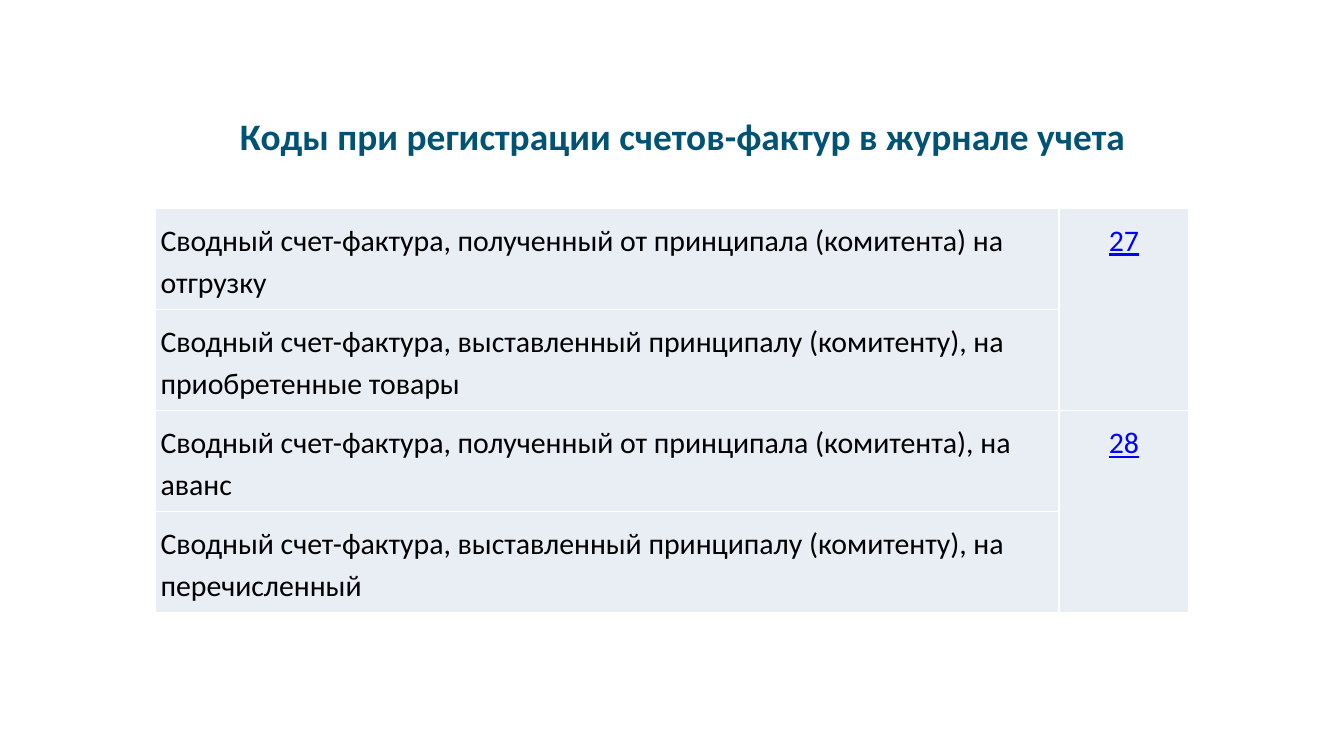
import pptx
import pptx.dml.color
import pptx.enum.text
import pptx.oxml
import pptx.oxml.ns
import pptx.util

PX = 4572  # 200 px to the inch
ALIGN = pptx.enum.text.PP_ALIGN

TITLE = "Коды при регистрации счетов-фактур в журнале учета"
# Each code covers the invoice kinds listed with it.
CODE_GROUPS = [
    ("27", ["Сводный счет-фактура, полученный от принципала (комитента) на отгрузку",
            "Сводный счет-фактура, выставленный принципалу (комитенту), на приобретенные товары"]),
    ("28", ["Сводный счет-фактура, полученный от принципала (комитента), на аванс",
            "Сводный счет-фактура, выставленный принципалу (комитенту), на перечисленный"]),
]
TITLE_FORMAT = {"size": pptx.util.Pt(20), "bold": True}
CELL_FORMAT = {"size": pptx.util.Pt(16), "bold": False}
CODE_FORMAT = CELL_FORMAT | {"underline": True}
CELL_MARGINS = {"margin_left": 8, "margin_top": 14, "margin_right": 8, "margin_bottom": 14}


def px(*lengths):
    return [pptx.util.Emu(length * PX) for length in lengths]


def color(hex_string):
    return pptx.dml.color.RGBColor.from_string(hex_string)


def write(frame, text, align, hex_string, font_format):
    para = frame.paragraphs[0]
    para.alignment = align
    span = para.add_run()
    span.text = text
    span.font.name = "Calibri"
    span.font.color.rgb = color(hex_string)
    for name, value in font_format.items():
        setattr(span.font, name, value)
    return para


def add_borders(cell, hex_string, points):
    properties = cell._tc.get_or_add_tcPr()
    for side in ("lnL", "lnR", "lnT", "lnB"):
        properties.append(pptx.oxml.parse_xml(
            f'<a:{side} {pptx.oxml.ns.nsdecls("a")} w="{int(pptx.util.Pt(points))}">'
            f'<a:solidFill><a:srgbClr val="{hex_string}"/></a:solidFill></a:{side}>'))


def style_cell(cell):
    add_borders(cell, "FFFFFF", 1)
    cell.fill.solid()
    cell.fill.fore_color.rgb = color("E9EDF4")
    for name, length in CELL_MARGINS.items():
        setattr(cell, name, px(length)[0])


def add_title(page, left, top, width, height):
    box = page.shapes.add_textbox(*px(left, top, width, height))
    box.text_frame.word_wrap = True
    box.text_frame.auto_size = pptx.enum.text.MSO_AUTO_SIZE.SHAPE_TO_FIT_TEXT
    write(box.text_frame, TITLE, ALIGN.CENTER, "025373", TITLE_FORMAT)


def add_code_table(page, left, top, width, height, code_width):
    row_count = sum(len(kinds) for _, kinds in CODE_GROUPS)
    table = page.shapes.add_table(row_count, 2, *px(left, top, width, height)).table
    table.first_row = table.horz_banding = False
    table.columns[0].width, table.columns[1].width = px(width - code_width, code_width)
    for cell in table.iter_cells():
        style_cell(cell)

    row = 0
    for code, kinds in CODE_GROUPS:
        code_cell = table.cell(row, 1)
        code_cell.merge(table.cell(row + len(kinds) - 1, 1))
        paras = [write(code_cell.text_frame, code, ALIGN.CENTER, "0000FF", CODE_FORMAT)]
        for offset, kind in enumerate(kinds):
            frame = table.cell(row + offset, 0).text_frame
            paras.append(write(frame, kind, ALIGN.LEFT, "000000", CELL_FORMAT))
        for para in paras:
            para.line_spacing = 1.15
        row += len(kinds)


def main():
    deck = pptx.Presentation()
    deck.slide_width, deck.slide_height = px(2000, 1125)
    page = deck.slides.add_slide(deck.slide_layouts[6])
    add_title(page, 87, 158, 1858, 88)
    add_code_table(page, 231, 310, 1538, 584, code_width=193)
    deck.save("out.pptx")


if __name__ == "__main__":
    main()
